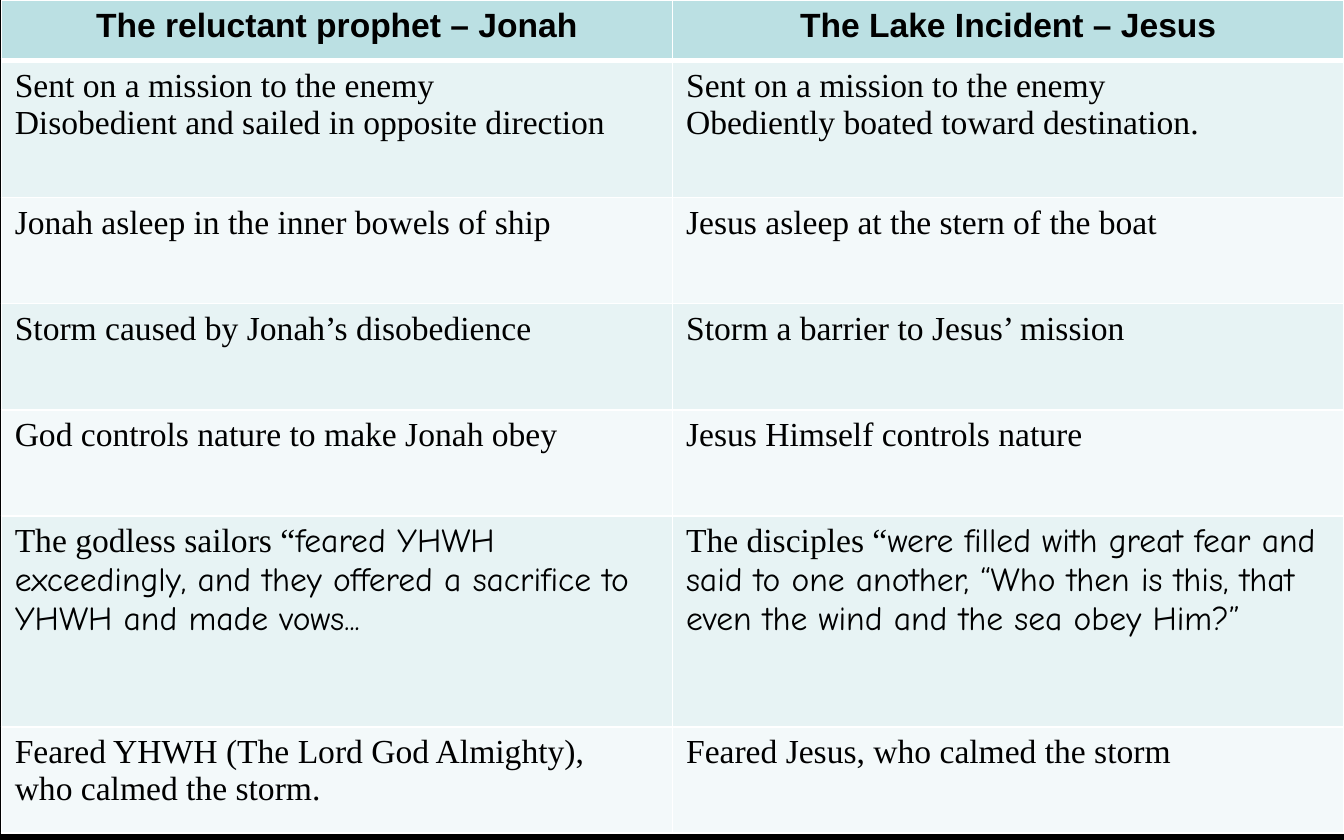
from dataclasses import dataclass

from lxml.etree import SubElement
from pptx import Presentation
from pptx.dml.color import RGBColor
from pptx.enum.text import PP_ALIGN as Align
from pptx.oxml.ns import qn
from pptx.util import Inches, Pt

PAGE_WIDTH, PAGE_HEIGHT = 10, 6.25
ROW_HEIGHTS = [0.45, 1.02, 0.79, 0.79, 0.79, 1.57, 0.79]
HEADER_FILL, BAND_FILLS = "BBE0E3", ("E7F3F4", "F3F9FA")
INK, RULE, BACKDROP = "000000", "FFFFFF", "000000"
HEADING, BODY, QUOTE = "Arial", "Times New Roman", "Comic Neue"


@dataclass(frozen=True)
class Span:
    text: str
    font: str = BODY


@dataclass(frozen=True)
class Comparison:
    """Each side is a list of paragraphs; a paragraph is a list of spans."""
    jonah: list[list[Span]]
    jesus: list[list[Span]]


def lines(*texts: str, font: str = BODY) -> list[list[Span]]:
    return [[Span(text, font)] for text in texts]


def quotation(lead: str, quote: str) -> list[list[Span]]:
    return [[Span(lead), Span(quote, QUOTE)]]


COMPARISONS = [
    Comparison(lines("The reluctant prophet – Jonah", font=HEADING),
               lines("The Lake Incident – Jesus", font=HEADING)),
    Comparison(lines("Sent on a mission to the enemy",
                     "Disobedient and sailed in opposite direction"),
               lines("Sent on a mission to the enemy",
                     "Obediently boated toward destination.")),
    Comparison(lines("Jonah asleep in the inner bowels of ship"),
               lines("Jesus asleep at the stern of the boat")),
    Comparison(lines("Storm caused by Jonah’s disobedience"),
               lines("Storm a barrier to Jesus’ mission")),
    Comparison(lines("God controls nature to make Jonah obey"),
               lines("Jesus Himself controls nature")),
    Comparison(quotation("The godless sailors “",
                         "feared YHWH exceedingly, and they offered a sacrifice "
                         "to YHWH and made vows..."),
               quotation("The disciples “",
                         "were filled with great fear and said to one another, "
                         "“Who then is this, that even the wind and the sea obey Him?”")),
    Comparison(lines("Feared YHWH (The Lord God Almighty), \nwho calmed the storm."),
               lines("Feared Jesus, who calmed the storm")),
]


def color(value: str) -> RGBColor:
    return RGBColor.from_string(value)


def add_span(para, span: Span) -> None:
    for index, text in enumerate(span.text.split("\n")):
        if index:
            para.add_line_break()
        run = para.add_run()
        run.text = text
        looks = {"name": span.font, "size": Pt(18), "bold": span.font == HEADING}
        for name, value in looks.items():
            setattr(run.font, name, value)
        run.font.color.rgb = color(INK)


def write_cell(cell, paragraphs: list[list[Span]], align: Align) -> None:
    frame = cell.text_frame
    for index, spans in enumerate(paragraphs):
        para = frame.add_paragraph() if index else frame.paragraphs[0]
        para.alignment = align
        for span in spans:
            add_span(para, span)


def rule_cell(cell, top: float, bottom: float) -> None:
    """Draw the cell's borders; must run before the fill is set."""
    properties = cell._tc.get_or_add_tcPr()
    for side, width in {"L": 1, "R": 1, "T": top, "B": bottom}.items():
        line = SubElement(properties, qn(f"a:ln{side}"), w=str(Pt(width)))
        fill = SubElement(line, qn("a:solidFill"))
        SubElement(fill, qn("a:srgbClr"), val=RULE)


def add_comparison_table(page) -> None:
    table = page.shapes.add_table(
        len(COMPARISONS), 2, Inches(0.01), 0,
        Inches(PAGE_WIDTH - 0.01), Inches(sum(ROW_HEIGHTS))).table
    for row, height in zip(table.rows, ROW_HEIGHTS):
        row.height = Inches(height)
    for index, comparison in enumerate(COMPARISONS):
        is_header = index == 0
        fill = HEADER_FILL if is_header else BAND_FILLS[(index - 1) % 2]
        for column, paragraphs in enumerate((comparison.jonah, comparison.jesus)):
            cell = table.cell(index, column)
            rule_cell(cell, top=3 if index == 1 else 1, bottom=3 if is_header else 1)
            cell.fill.solid()
            cell.fill.fore_color.rgb = color(fill)
            write_cell(cell, paragraphs, Align.CENTER if is_header else Align.LEFT)


def main() -> None:
    deck = Presentation()
    deck.slide_width, deck.slide_height = Inches(PAGE_WIDTH), Inches(PAGE_HEIGHT)
    page = deck.slides.add_slide(deck.slide_layouts[6])
    page.background.fill.solid()
    page.background.fill.fore_color.rgb = color(BACKDROP)
    add_comparison_table(page)
    deck.save("out.pptx")


if __name__ == "__main__":
    main()
